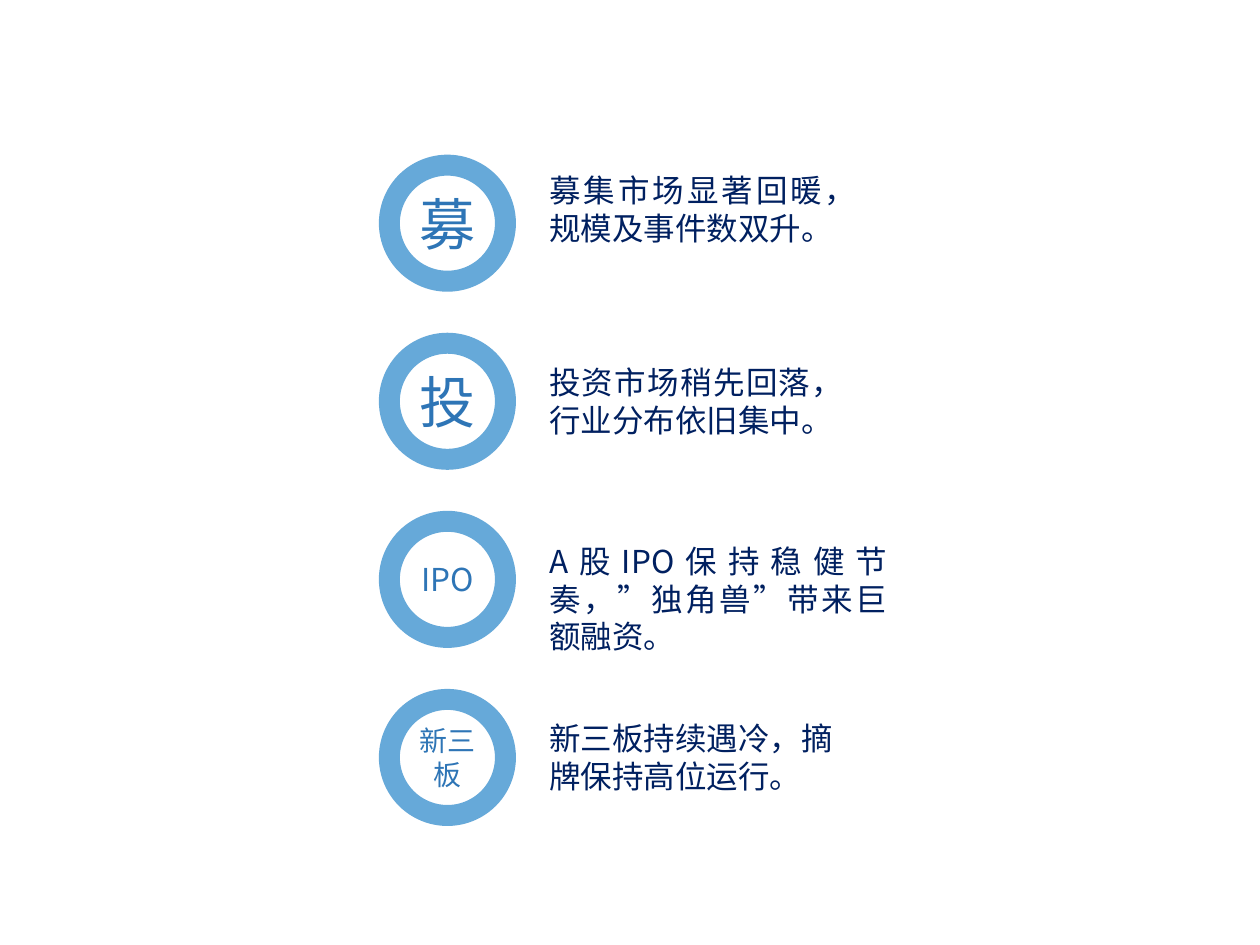
from lxml import etree
from pptx import Presentation
from pptx import util as u
from pptx.dml.color import RGBColor
from pptx.enum import shapes, text
from pptx.oxml.ns import qn

COLORS = {"ring": "0070C0", "label": "2E75B6", "body": "002060"}


def write(tf, content, size, color, font, align):
    """Put one formatted paragraph into a text frame."""
    tf.word_wrap = True
    p = tf.paragraphs[0]
    p.alignment = align
    r = p.add_run()
    r.text = content
    r.font.size = u.Pt(size)
    r.font.name = font
    r.font.color.rgb = RGBColor.from_string(COLORS[color])
    # East Asian characters take their own typeface element
    etree.SubElement(r.font._element, qn("a:ea"), typeface=font)


prs = Presentation()
prs.slide_width, prs.slide_height = u.Cm(25.4), u.Cm(19.05)
s = prs.slides.add_slide(prs.slide_layouts[6])

# Ring label, label size, text top and width in cm, text
rows = [
    ("募", 32, 3.33, 6.7, "募集市场显著回暖，规模及事件数双升。"),
    ("投", 32, 7.19, 6.43, "投资市场稍先回落，行业分布依旧集中。"),
    ("IPO", 18, 10.8, 7.32, "A股IPO保持稳健节奏，”独角兽”带来巨额融资。"),
    ("新三板", 16, 14.38, 6.22, "新三板持续遇冷，摘牌保持高位运行。"),
]
ring_top, pitch, diameter = 3.33, 3.59, 2.34

for i, (label, size, top, width, body) in enumerate(rows):
    # Ring with translucent outline
    sp = s.shapes.add_shape(shapes.MSO_SHAPE.OVAL, u.Cm(7.85), u.Cm(ring_top + i * pitch),
                            u.Cm(diameter), u.Cm(diameter))
    sp.shadow.inherit = False
    sp.fill.background()
    sp.line.width = u.Pt(12)
    sp.line.color.rgb = RGBColor.from_string(COLORS["ring"])
    rgb = sp.line._ln.find(".//" + qn("a:srgbClr"))
    etree.SubElement(rgb, qn("a:alpha"), val="60000")
    sp.text_frame.vertical_anchor = text.MSO_ANCHOR.MIDDLE
    write(sp.text_frame, label, size=size, color="label",
          font="Noto Sans CJK JP", align=text.PP_ALIGN.CENTER)

    # Statement beside the ring
    box = s.shapes.add_textbox(u.Cm(10.82), u.Cm(top), u.Cm(width), u.Cm(1.8))
    box.text_frame.auto_size = text.MSO_AUTO_SIZE.SHAPE_TO_FIT_TEXT
    write(box.text_frame, body, size=18, color="body",
          font="Noto Sans CJK SC", align=text.PP_ALIGN.JUSTIFY)

prs.save("out.pptx")
